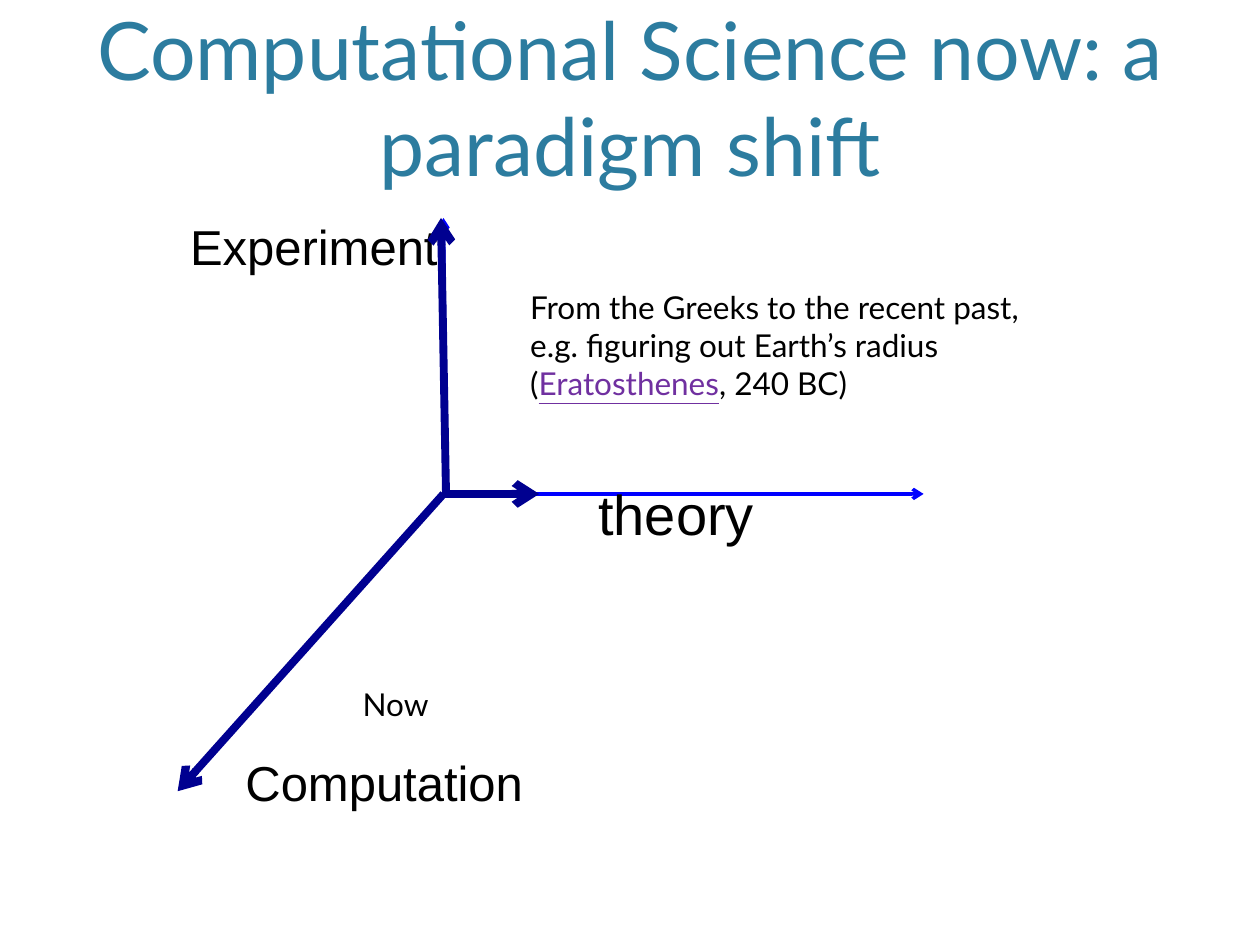
"""Build a slide on the three axes of computational science."""
from lxml.etree import SubElement
from pptx import Presentation
from pptx.dml.color import RGBColor as Rgb
from pptx.enum.shapes import MSO_CONNECTOR as Link
from pptx.enum.text import MSO_ANCHOR as Anchor, MSO_AUTO_SIZE as Fit, PP_ALIGN as Align
from pptx.oxml.ns import qn
from pptx.util import Inches, Pt

SIZE = (10, 7.5)
TITLE = "Computational Science now: a paradigm shift"
HEAD = {"name": "Lato", "size": 46, "color": "2C7C9F"}
AXIS = {"name": "Arial", "size": 28, "color": "000000"}
NOTE = {"name": "Lato", "size": 18, "color": "000000"}
LINK = {**NOTE, "color": "7030A0", "underline": True}
THIN = {"color": "0000FF", "width": 2}
BOLD = {"color": "000090", "width": 4.5}

AREA = (6, 1.6, 88, 19.47)
MID = 52.27
TOP = 23.07
THINS = [
    ((35.4, MID), (35.2, TOP), THIN),
    ((35.4, MID), (73.3, MID), THIN),
]
BOLDS = [
    ((35.2, MID), (14.1, 83.73), BOLD),
    ((35.4, MID), (35, TOP), BOLD),
    ((35.2, MID), (42.8, MID), BOLD),
]
LABELS = [
    ((46.5, 50.13, 14.5, 8.53), [[("theory", {**AXIS, "size": 32})]]),
    ((14.1, 22.27, 21.9, 7.6), [[("Experiment", AXIS)]]),
    ((41.1, 29.87, 44.4, 13.47), [
        [("From the Greeks to the recent past,", NOTE)],
        [("e.g. figuring out Earth’s radius", NOTE)],
        [("(", NOTE), ("Eratosthenes", LINK), (", 240 BC)", NOTE)],
    ]),
    ((18.5, 78.93, 24.3, 7.6), [[("Computation", AXIS)]]),
    ((27.8, 71.87, 7.2, 5.33), [[("Now", NOTE)]]),
]


def hue(code):
    """Turn a hex string into a colour."""
    return Rgb.from_string(code)


def place(*parts):
    """Turn x, y percentages of the slide into lengths."""
    return [Inches(SIZE[i % 2] * part / 100) for i, part in enumerate(parts)]


def style(font, form):
    """Set font attributes from a dict."""
    for key, val in form.items():
        if key == "color":
            font.color.rgb = hue(val)
        else:
            setattr(font, key, Pt(val) if key == "size" else val)


def arrow(slide, start, end, form):
    """Draw a line with an open arrowhead."""
    line = slide.shapes.add_connector(Link.STRAIGHT, *place(*start, *end))
    line.line.color.rgb = hue(form["color"])
    line.line.width = Pt(form["width"])
    SubElement(line.line._get_or_add_ln(), qn("a:tailEnd"), type="arrow")
    SubElement(line._element.spPr, qn("a:effectLst"))


def label(slide, area, rows):
    """Add a text box of styled runs."""
    frame = slide.shapes.add_textbox(*place(*area)).text_frame
    frame.word_wrap = False
    frame.auto_size = Fit.SHAPE_TO_FIT_TEXT
    for i, row in enumerate(rows):
        para = frame.add_paragraph() if i else frame.paragraphs[0]
        for text, form in row:
            run = para.add_run()
            run.text = text
            style(run.font, form)


def head(slide):
    """Fill and move the title placeholder."""
    title = slide.shapes.title
    title.left, title.top, title.width, title.height = place(*AREA)
    frame = title.text_frame
    frame.text = TITLE
    frame.auto_size = Fit.NONE
    frame.vertical_anchor = Anchor.BOTTOM
    para = frame.paragraphs[0]
    para.alignment = Align.CENTER
    style(para.runs[0].font, HEAD)


def main():
    """Build and save the deck."""
    deck = Presentation()
    deck.slide_width, deck.slide_height = map(Inches, SIZE)
    slide = deck.slides.add_slide(deck.slide_layouts[5])
    head(slide)
    for item in THINS:
        arrow(slide, *item)
    for item in LABELS:
        label(slide, *item)
    for item in BOLDS:
        arrow(slide, *item)
    deck.save("out.pptx")


if __name__ == "__main__":
    main()
